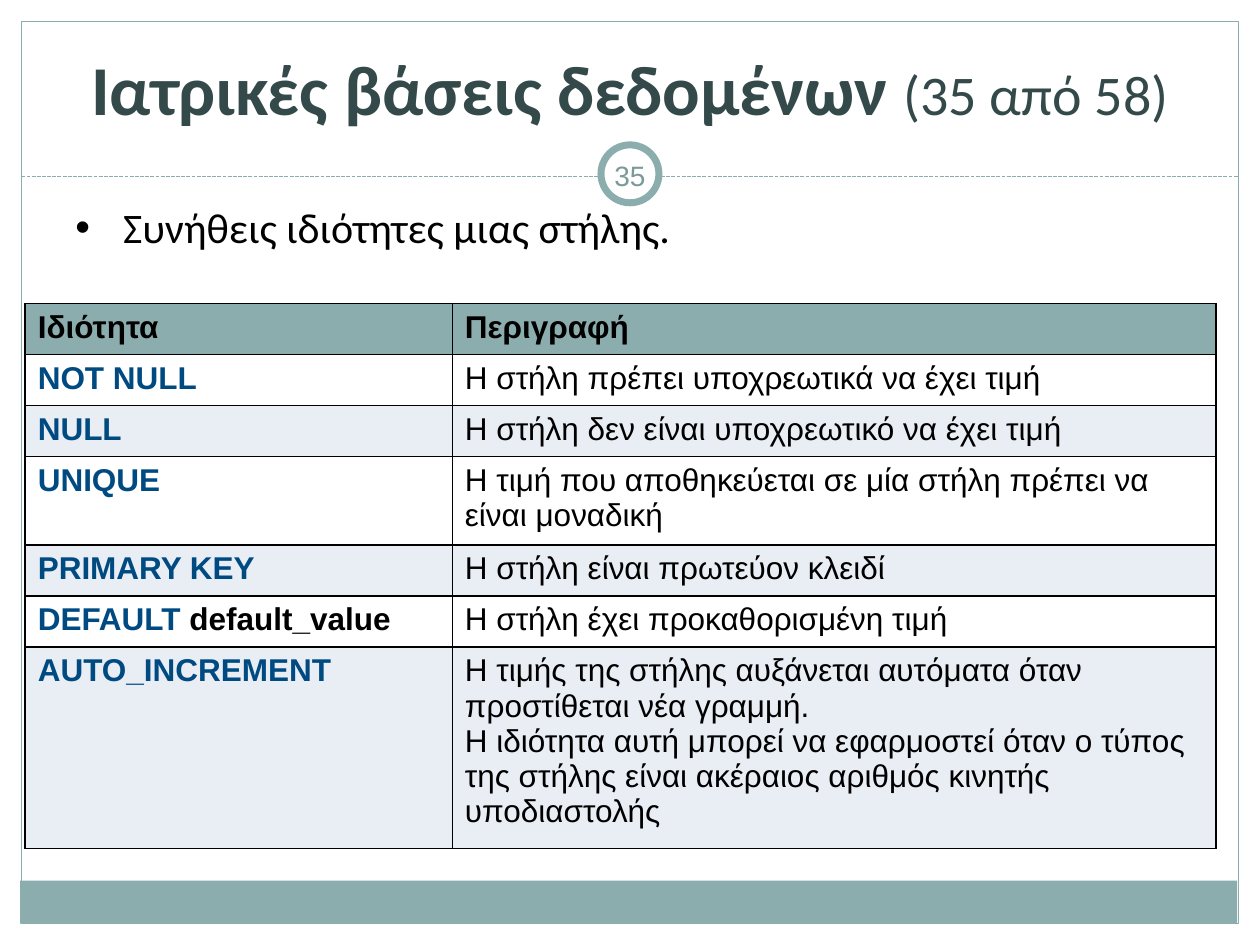
import pptx
import pptx.util
import pptx.dml.color
import pptx.enum.dml
import pptx.enum.shapes
import pptx.enum.text
import pptx.oxml
import pptx.oxml.ns
import lxml.etree

Pt = pptx.util.Pt
RGB = pptx.dml.color.RGBColor.from_string
qn = pptx.oxml.ns.qn
SHAPE = pptx.enum.shapes.MSO_SHAPE
ALIGN = pptx.enum.text.PP_ALIGN
ANCHOR = pptx.enum.text.MSO_ANCHOR

COLORS = {
    "teal": "8CADAE", "number": "7C999A", "title": "34494A", "keyword": "004A82",
    "black": "000000", "white": "FFFFFF", "band": "E9EDF4",
}

prs = pptx.Presentation()
prs.slide_width = pptx.util.Inches(10)
prs.slide_height = pptx.util.Inches(7.5)
s = prs.slides.add_slide(prs.slide_layouts[6])
COL = prs.slide_width / 100
ROW = prs.slide_height / 75


def grid(x, y, w, h):
    return [round(v) for v in (x * COL, y * ROW, w * COL, h * ROW)]


def write(p, text, size=18, font="Arial", color="black", bold=False, align=ALIGN.LEFT):
    p.alignment = align
    r = p.add_run()
    r.text = text
    r.font.size = Pt(size)
    r.font.name = font
    r.font.bold = bold
    r.font.color.rgb = RGB(COLORS[color])


cx = s.shapes.add_connector(pptx.enum.shapes.MSO_CONNECTOR.STRAIGHT, *grid(1.7, 14, 98.3, 14))
cx.end_x = prs.slide_width - cx.begin_x
cx.end_y = cx.begin_y
cx.line.color.rgb = RGB(COLORS["teal"])
cx.line.width = Pt(0.75)
cx.line.dash_style = pptx.enum.dml.MSO_LINE.SQUARE_DOT
lxml.etree.SubElement(cx._element.spPr, qn("a:effectLst"))

for kind, place, fill, width in (
    (SHAPE.RECTANGLE, (1.6, 69.9, 96.6, 3.4), "teal", 0),
    (SHAPE.RECTANGLE, (1.7, 1.7, 96.6, 71.6), None, 0.75),
    (SHAPE.OVAL, (47.7, 11.5, 4.6, 4.6), "white", 4),
):
    sp = s.shapes.add_shape(kind, *grid(*place))
    sp.shadow.inherit = False
    if fill:
        sp.fill.solid()
        sp.fill.fore_color.rgb = RGB(COLORS[fill])
    else:
        sp.fill.background()
    if width:
        sp.line.color.rgb = RGB(COLORS["teal"])
        sp.line.width = Pt(width)
    else:
        sp.line.fill.background()

boxes = []
for place, anchor in (
    ((47.5, 11.5, 5, 4.8), ANCHOR.MIDDLE),
    ((5, 2, 90, 9.9), ANCHOR.MIDDLE),
    ((5, 15.5, 90, 7.1), ANCHOR.TOP),
):
    tf = s.shapes.add_textbox(*grid(*place)).text_frame
    tf.word_wrap = True
    tf.vertical_anchor = anchor
    boxes.append(tf)
number, title, body = boxes

number.margin_left = number.margin_right = round(0.5 * COL)
write(number.paragraphs[0], "35", size=16, color="number", align=ALIGN.CENTER)

for text, size, bold in (("Ιατρικές βάσεις δεδομένων ", 40, True), ("(35 από 58)", 32, False)):
    write(title.paragraphs[0], text, size=size, font="Calibri", color="title",
          bold=bold, align=ALIGN.CENTER)

p = body.paragraphs[0]
write(p, "Συνήθεις ιδιότητες μιας στήλης.", size=24, font="Calibri")
p.space_before = Pt(4.8)
pPr = p._p.get_or_add_pPr()
indent = round(3.8 * COL)
pPr.set("marL", str(indent))
pPr.set("indent", str(-indent))
lxml.etree.SubElement(pPr, qn("a:buFont")).set("typeface", "Arial")
lxml.etree.SubElement(pPr, qn("a:buChar")).set("char", "•")

properties = [
    ("Ιδιότητα", "", ["Περιγραφή"]),
    ("NOT NULL", "", ["Η στήλη πρέπει υποχρεωτικά να έχει τιμή"]),
    ("NULL", "", ["Η στήλη δεν είναι υποχρεωτικό να έχει τιμή"]),
    ("UNIQUE", "", ["Η τιμή που αποθηκεύεται σε μία στήλη πρέπει να είναι μοναδική"]),
    ("PRIMARY KEY", "", ["Η στήλη είναι πρωτεύον κλειδί"]),
    ("DEFAULT ", "default_value", ["Η στήλη έχει προκαθορισμένη τιμή"]),
    ("AUTO_INCREMENT", "", [
        "Η τιμής της στήλης αυξάνεται αυτόματα όταν προστίθεται νέα γραμμή.",
        "Η ιδιότητα αυτή μπορεί να εφαρμοστεί όταν ο τύπος της στήλης είναι "
        "ακέραιος αριθμός κινητής υποδιαστολής",
    ]),
]
table = s.shapes.add_table(len(properties), 2, *grid(2, 24.1, 94.5, 28.4)).table
for column, width in zip(table.columns, (33.9, 60.6)):
    column.width = round(width * COL)

for i, (keyword, argument, lines) in enumerate(properties):
    header = i == 0
    table.rows[i].height = round(4.05 * ROW)
    name, description = table.rows[i].cells
    p = name.text_frame.paragraphs[0]
    write(p, keyword, color="black" if header else "keyword", bold=True)
    if argument:
        write(p, argument, bold=True)
    tf = description.text_frame
    for j, line in enumerate(lines):
        write(tf.add_paragraph() if j else tf.paragraphs[0], line, bold=header)
    for cell in (name, description):
        tcPr = cell._tc.get_or_add_tcPr()
        for side in ("lnL", "lnR", "lnT", "lnB"):
            ln = lxml.etree.SubElement(tcPr, qn("a:" + side), w=str(Pt(1)))
            paint = lxml.etree.SubElement(ln, qn("a:solidFill"))
            lxml.etree.SubElement(paint, qn("a:srgbClr"), val=COLORS["black"])
        cell.fill.solid()
        shade = "teal" if header else ("white", "band")[(i - 1) % 2]
        cell.fill.fore_color.rgb = RGB(COLORS[shade])

prs.save("out.pptx")
